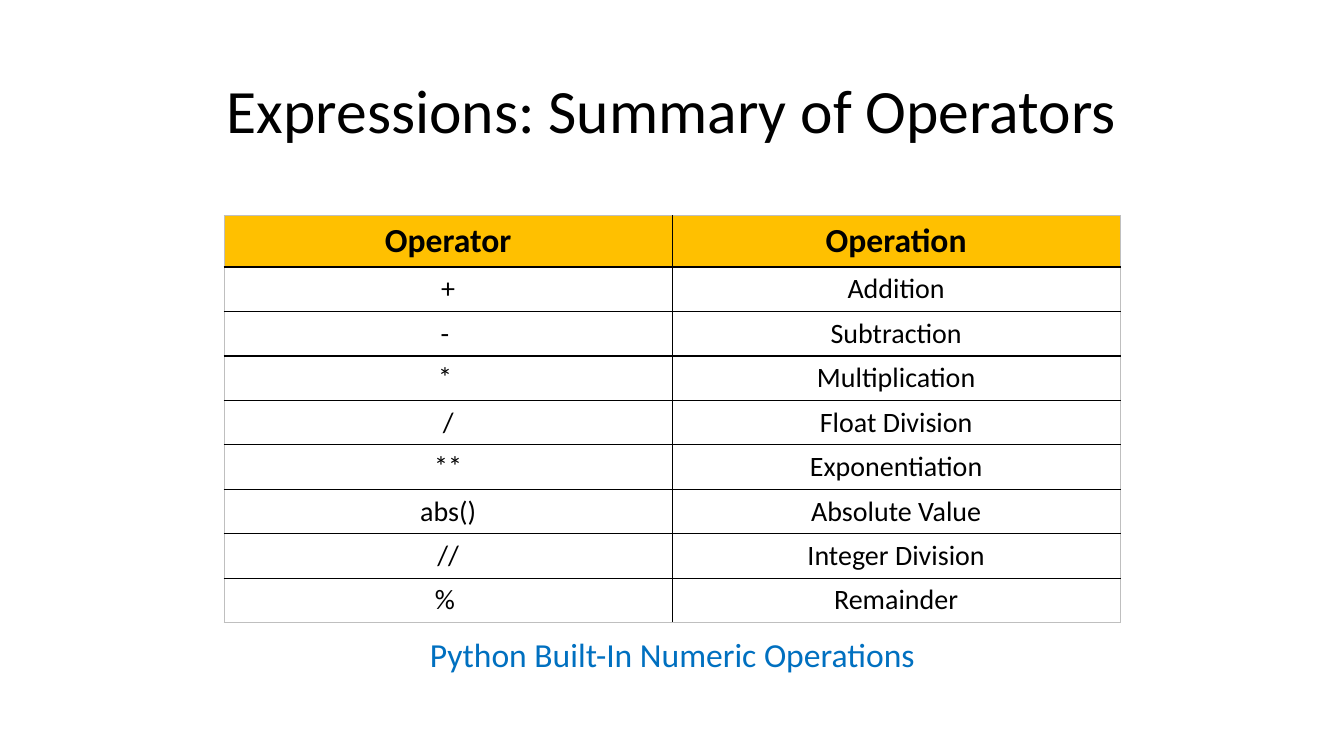
import pptx
import pptx.dml.color
import pptx.enum.text
import pptx.oxml
import pptx.oxml.ns
import pptx.util
from pptx.util import Cm

BLACK = pptx.dml.color.RGBColor(0x00, 0x00, 0x00)
GREY = pptx.dml.color.RGBColor(0xBF, 0xBF, 0xBF)
AMBER = pptx.dml.color.RGBColor(0xFF, 0xC0, 0x00)
BLUE = pptx.dml.color.RGBColor(0x00, 0x70, 0xC0)
CENTER = pptx.enum.text.PP_ALIGN.CENTER

ROWS = [
    ("Operator", "Operation"),
    ("+", "Addition"),
    ("- ", "Subtraction"),
    ("* ", "Multiplication"),
    ("/", "Float Division"),
    ("**", "Exponentiation"),
    ("abs()", "Absolute Value"),
    ("//", "Integer Division"),
    ("% ", "Remainder"),
]


def write(text_frame, text, size, color, bold=False):
    """Put one centred Calibri line into the frame and return its paragraph."""
    paragraph = text_frame.paragraphs[0]
    paragraph.text = text
    paragraph.alignment = CENTER
    paragraph.font.name = "Calibri"
    paragraph.font.size = pptx.util.Pt(size)
    paragraph.font.color.rgb = color
    paragraph.font.bold = bold
    return paragraph


def add_border(cell, side, color):
    """Draw a one-point line on a side of the cell: L, R, T or B."""
    cell._tc.get_or_add_tcPr().append(pptx.oxml.parse_xml(
        f'<a:ln{side} {pptx.oxml.ns.nsdecls("a")} w="12700"><a:solidFill>'
        f'<a:srgbClr val="{color}"/></a:solidFill></a:ln{side}>'))


presentation = pptx.Presentation()
presentation.slide_width = Cm(33.87)
presentation.slide_height = Cm(19.05)
slide = presentation.slides.add_slide(presentation.slide_layouts[6])

# Title
title = slide.shapes.add_textbox(Cm(2.33), Cm(1.01), Cm(29.21), Cm(3.68))
title.text_frame.word_wrap = True
title.text_frame.vertical_anchor = pptx.enum.text.MSO_ANCHOR.MIDDLE
heading = write(title.text_frame, "Expressions: Summary of Operators", 44, BLACK)
heading.line_spacing = 0.9

# Operator table: black inner lines, grey outer frame
table = slide.shapes.add_table(
    len(ROWS), 2, Cm(5.65), Cm(5.44), Cm(22.58), Cm(10.25)).table
for row_index, texts in enumerate(ROWS):
    is_header = row_index == 0
    is_last = row_index == len(ROWS) - 1
    table.rows[row_index].height = Cm(1.29 if is_header else 1.12)
    for column_index, text in enumerate(texts):
        cell = table.cell(row_index, column_index)
        write(cell.text_frame, text, 24 if is_header else 20, BLACK, is_header)
        add_border(cell, "L", GREY if column_index == 0 else BLACK)
        add_border(cell, "R", GREY if column_index == 1 else BLACK)
        add_border(cell, "T", GREY if is_header else BLACK)
        add_border(cell, "B", GREY if is_last else BLACK)
        if is_header:
            cell.fill.solid()
            cell.fill.fore_color.rgb = AMBER
        else:
            cell.fill.background()

# Caption
caption = slide.shapes.add_textbox(Cm(10.52), Cm(15.85), Cm(12.85), Cm(1.27))
caption.text_frame.word_wrap = False
write(caption.text_frame, "Python Built-In Numeric Operations", 24, BLUE)

presentation.save("out.pptx")
